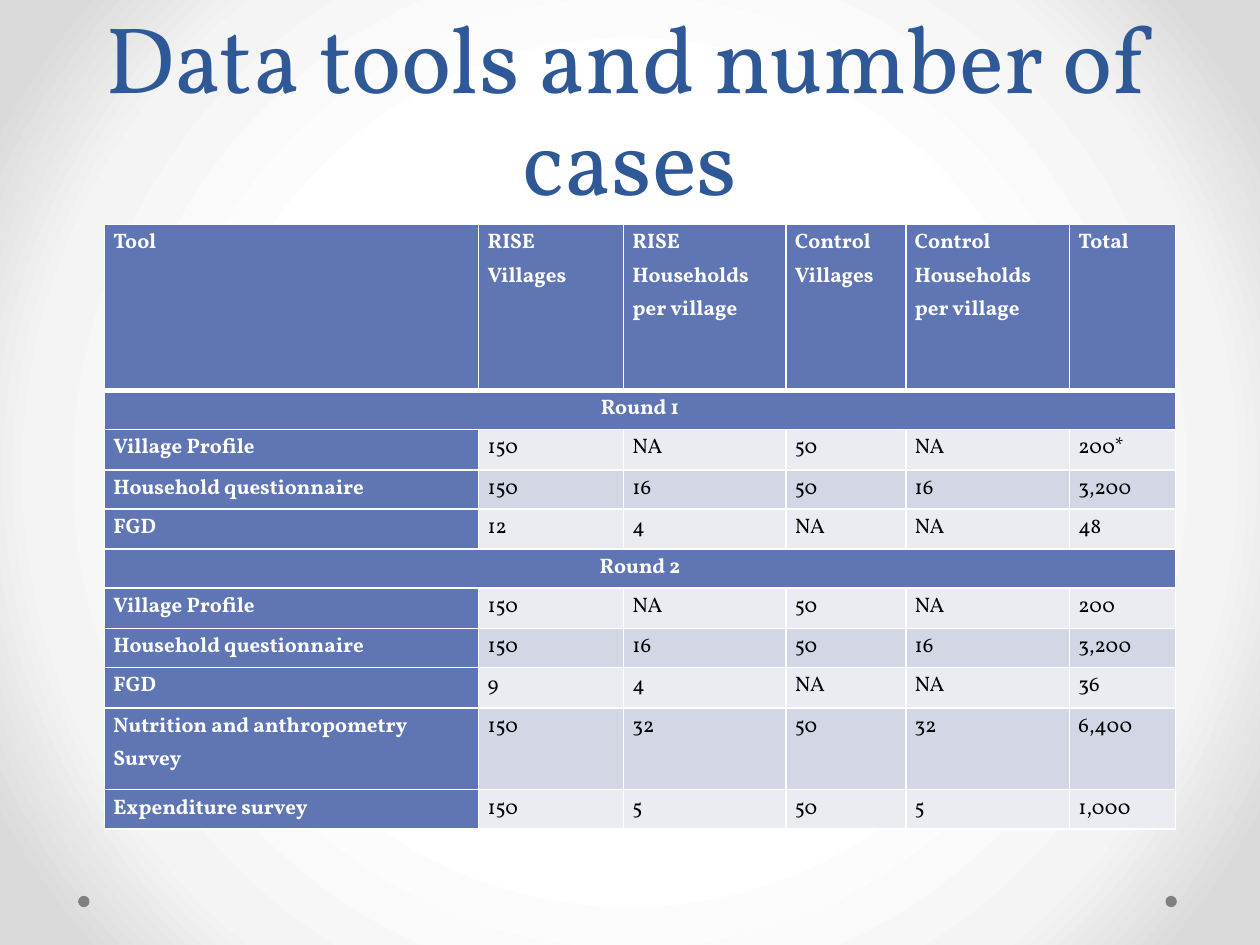
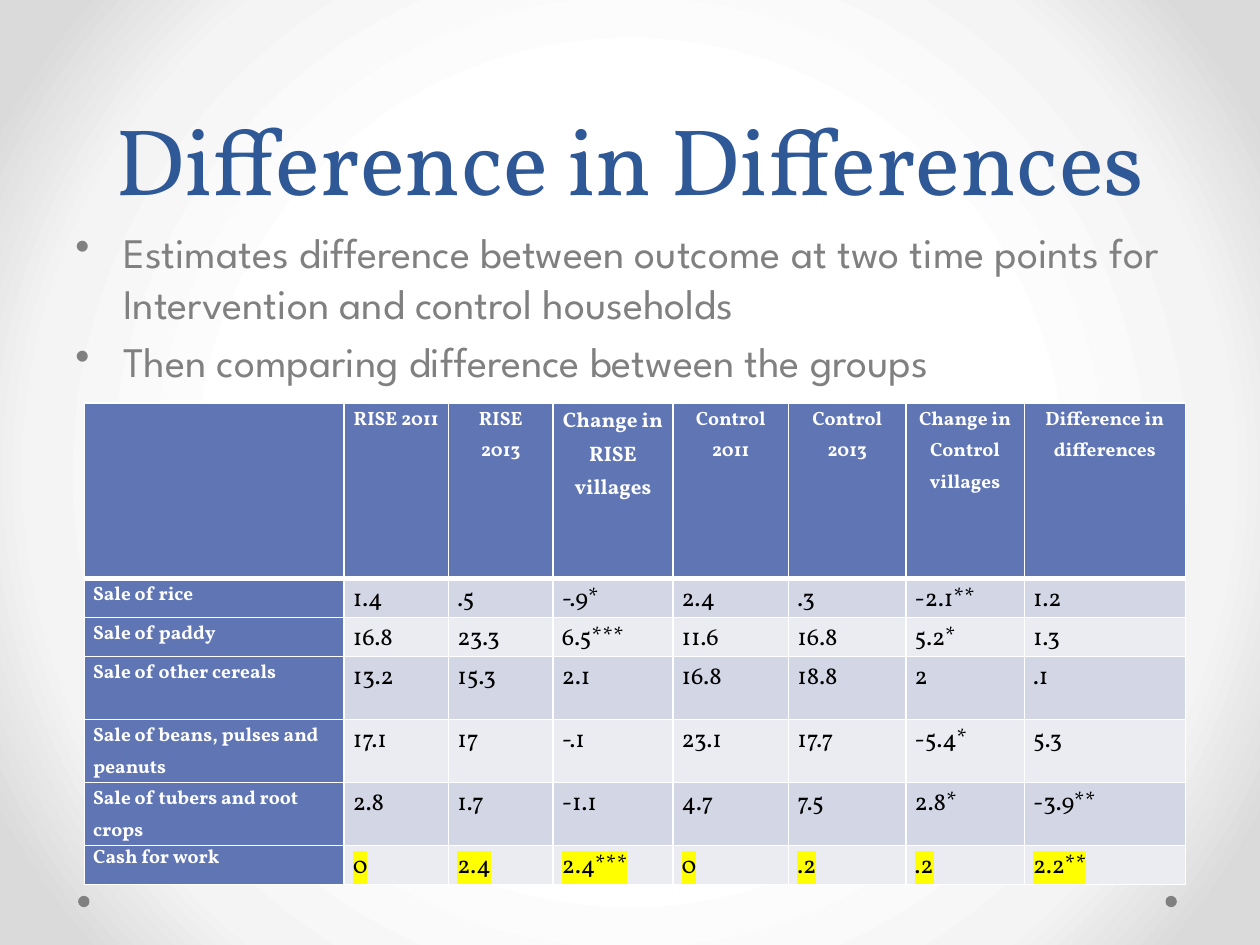
import pptx
import pptx.dml.color
import pptx.enum.shapes
import pptx.enum.text
import pptx.oxml
import pptx.oxml.ns
import pptx.util
from lxml import etree

Inches, Pt = pptx.util.Inches, pptx.util.Pt
qn = pptx.oxml.ns.qn
ALIGN = pptx.enum.text.PP_ALIGN

COLORS = {
    "title": "2F5897", "gray": "808080", "white": "FFFFFF", "black": "000000",
    "header": "6076B4", "light": "EAECF2", "dark": "D2D6E5", "yellow": "FFFF00",
    "fog": "F4F4F4", "edge": "DADADA",
}
SERIF, SANS = "Vollkorn", "League Spartan"
BACKGROUND_STOPS = [(50, "white"), (76, "fog"), (92, "edge")]
DOT_LEFTS, DOT_TOP, DOT_SIZE = (0.62, 9.25), 7.11, 0.09

TOOLS = {
    "title": "Data tools and number of cases",
    "left": 0.83, "top": 1.78,
    "widths": [2.97, 1.15, 1.29, 0.95, 1.3, 0.84],
    "heights": [1.32] + [0.31, 0.32] * 4 + [0.65, 0.31],
    "bands": ("light", "dark"),
    "rows": [
        ("Tool", "RISE Villages", "RISE Households per village", "Control Villages",
         "Control\nHouseholds per village", "Total"),
        ("Round 1",),
        ("Village Profile", "150", "NA", "50", "NA", "200*"),
        ("Household questionnaire", "150", "16", "50", "16", "3,200"),
        ("FGD", "12", "4", "NA", "NA", "48"),
        ("Round 2",),
        ("Village Profile", "150", "NA", "50", "NA", "200"),
        ("Household questionnaire", "150", "16", "50", "16", "3,200"),
        ("FGD", "9", "4", "NA", "NA", "36"),
        ("Nutrition and anthropometry Survey", "150", "32", "50", "32", "6,400"),
        ("Expenditure survey", "150", "5", "50", "5", "1,000"),
    ],
}
DIFFERENCES = {
    "title": "Difference in Differences",
    "left": 0.67, "top": 3.2,
    "widths": [2.06, 0.83, 0.83, 0.95, 0.92, 0.93, 0.94, 1.28],
    "heights": [1.39, 0.31, 0.31, 0.5, 0.5, 0.5, 0.31],
    "bands": ("dark", "light"),
    "rows": [
        ("", "RISE 2011", "RISE 2013", "Change in RISE villages", "Control 2011",
         "Control 2013", "Change in Control villages", "Difference in differences"),
        ("Sale of rice", "1.4", ".5", "-.9*", "2.4", ".3", "-2.1**", "1.2"),
        ("Sale of paddy", "16.8", "23.3", "6.5***", "11.6", "16.8", "5.2*", "1.3"),
        ("Sale of other cereals", "13.2", "15.3", "2.1", "16.8", "18.8", "2", ".1"),
        ("Sale of beans, pulses and peanuts", "17.1", "17", "-.1", "23.1", "17.7", "-5.4*", "5.3"),
        ("Sale of tubers and root crops", "2.8", "1.7", "-1.1", "4.7", "7.5", "2.8*", "-3.9**"),
        ("Cash for work", "0", "2.4", "2.4***", "0", ".2", ".2", "2.2**"),
    ],
}
BULLETS = [
    "Estimates difference between outcome at two time points for Intervention and control households",
    "Then comparing difference between the groups",
]


def rgb(name):
    return pptx.dml.color.RGBColor.from_string(COLORS[name])


def write(frame, text, size=12, font=SERIF, color="black", bold=False, align=ALIGN.LEFT,
          line=None, before=0, after=0, bullet=False, highlight=None):
    frame.word_wrap = True
    for index, part in enumerate(text.split("\n")):
        para = frame.add_paragraph() if index else frame.paragraphs[0]
        para.alignment, para.line_spacing = align, line
        para.space_before, para.space_after = Pt(before), Pt(after)
        span = para.add_run()
        span.text = part
        span.font.size, span.font.name, span.font.bold = Pt(size), font, bold
        span.font.color.rgb = rgb(color)
        properties = span.font._element
        if highlight:
            mark = etree.Element(qn("a:highlight"))
            etree.SubElement(mark, qn("a:srgbClr"), val=COLORS[highlight])
            properties.find(qn("a:solidFill")).addnext(mark)
        if bullet:
            settings = para._p.get_or_add_pPr()
            settings.set("marL", str(Inches(0.38)))
            settings.set("indent", str(-Inches(0.38)))
            etree.SubElement(settings, qn("a:buChar"), char="•")


def paint_background(page):
    page.background.fill.gradient()
    gradient = page.background._cSld.find(".//" + qn("a:gradFill"))
    for child in list(gradient):
        gradient.remove(child)
    stops = etree.SubElement(gradient, qn("a:gsLst"))
    for position, name in BACKGROUND_STOPS:
        stop = etree.SubElement(stops, qn("a:gs"), pos=str(position * 1000))
        etree.SubElement(stop, qn("a:srgbClr"), val=COLORS[name])
    shade = etree.SubElement(gradient, qn("a:path"))
    shade.set("path", "circle")
    etree.SubElement(shade, qn("a:fillToRect"), l="50000", t="50000", r="50000", b="50000")


def add_page(deck, title):
    page = deck.slides.add_slide(deck.slide_layouts[6])
    paint_background(page)
    for left in DOT_LEFTS:
        dot = page.shapes.add_shape(pptx.enum.shapes.MSO_SHAPE.OVAL, Inches(left),
                                    Inches(DOT_TOP), Inches(DOT_SIZE), Inches(DOT_SIZE))
        dot.shadow.inherit = False
        dot.fill.solid()
        dot.fill.fore_color.rgb = rgb("gray")
        dot.line.fill.background()
    box = page.shapes.add_textbox(Inches(0.5), 0, Inches(9), Inches(1.75))
    box.text_frame.vertical_anchor = pptx.enum.text.MSO_ANCHOR.BOTTOM
    write(box.text_frame, title, size=54, color="title", align=ALIGN.CENTER, line=Pt(58))
    return page


def style_cell(cell, fill, top=1, bottom=1):
    cell.margin_left = cell.margin_right = Inches(0.07)
    cell.margin_top = cell.margin_bottom = 0
    properties = cell._tc.get_or_add_tcPr()
    for side, width in (("L", 1), ("R", 1), ("T", top), ("B", bottom)):
        edge = etree.SubElement(properties, qn("a:ln" + side), w=str(Pt(width)))
        solid = etree.SubElement(edge, qn("a:solidFill"))
        etree.SubElement(solid, qn("a:srgbClr"), val=COLORS["white"])
    cell.fill.solid()
    cell.fill.fore_color.rgb = rgb(fill)


def add_grid(page, content, cell_format):
    rows, widths, heights = content["rows"], content["widths"], content["heights"]
    table = page.shapes.add_table(
        len(rows), len(widths), Inches(content["left"]), Inches(content["top"]),
        Inches(sum(widths)), Inches(sum(heights))).table
    table.first_row = table.horz_banding = False
    for column, width in zip(table.columns, widths):
        column.width = Inches(width)
    band = 0
    for r, (row, height) in enumerate(zip(rows, heights)):
        table.rows[r].height = Inches(height)
        section = len(row) == 1
        for c in range(len(widths)):
            heading = r == 0 or c == 0 or section
            style_cell(table.cell(r, c), "header" if heading else content["bands"][band % 2],
                       top=3 if r == 1 else 1, bottom=3 if r == 0 else 1)
            if c < len(row) and row[c]:
                look = dict(color="white" if heading else "black", bold=heading, line=1.15)
                look.update(cell_format(r, c, section))
                write(table.cell(r, c).text_frame, row[c], **look)
        if section:
            table.cell(r, 0).merge(table.cell(r, len(widths) - 1))
        band = 0 if section or r == 0 else band + 1


def tools_format(r, c, section):
    return {"align": ALIGN.CENTER} if section else {}


def differences_format(r, c, section):
    last = len(DIFFERENCES["rows"]) - 1
    if r == 0:
        gap = 6 if DIFFERENCES["rows"][0][c].endswith(("2011", "2013")) else 0
        return dict(size=12 if c == 3 else 11, align=ALIGN.CENTER, before=gap, after=gap)
    if c == 0:
        gap = {1: 6, last: 0}.get(r, 2)
        return dict(size=11, before=gap, after=gap, line=1.0 if r == last else 1.15)
    return dict(size=14, before=6, after=6, highlight="yellow" if r == last else None)


def main():
    deck = pptx.Presentation()
    deck.slide_width, deck.slide_height = Inches(10), Inches(7.5)

    add_grid(add_page(deck, TOOLS["title"]), TOOLS, tools_format)

    page = add_page(deck, DIFFERENCES["title"])
    box = page.shapes.add_textbox(Inches(0.5), Inches(1.75), Inches(9), Inches(4.95))
    write(box.text_frame, "\n".join(BULLETS), size=24, font=SANS, color="gray",
          before=4.8, bullet=True)
    add_grid(page, DIFFERENCES, differences_format)

    deck.save("out.pptx")


if __name__ == "__main__":
    main()
